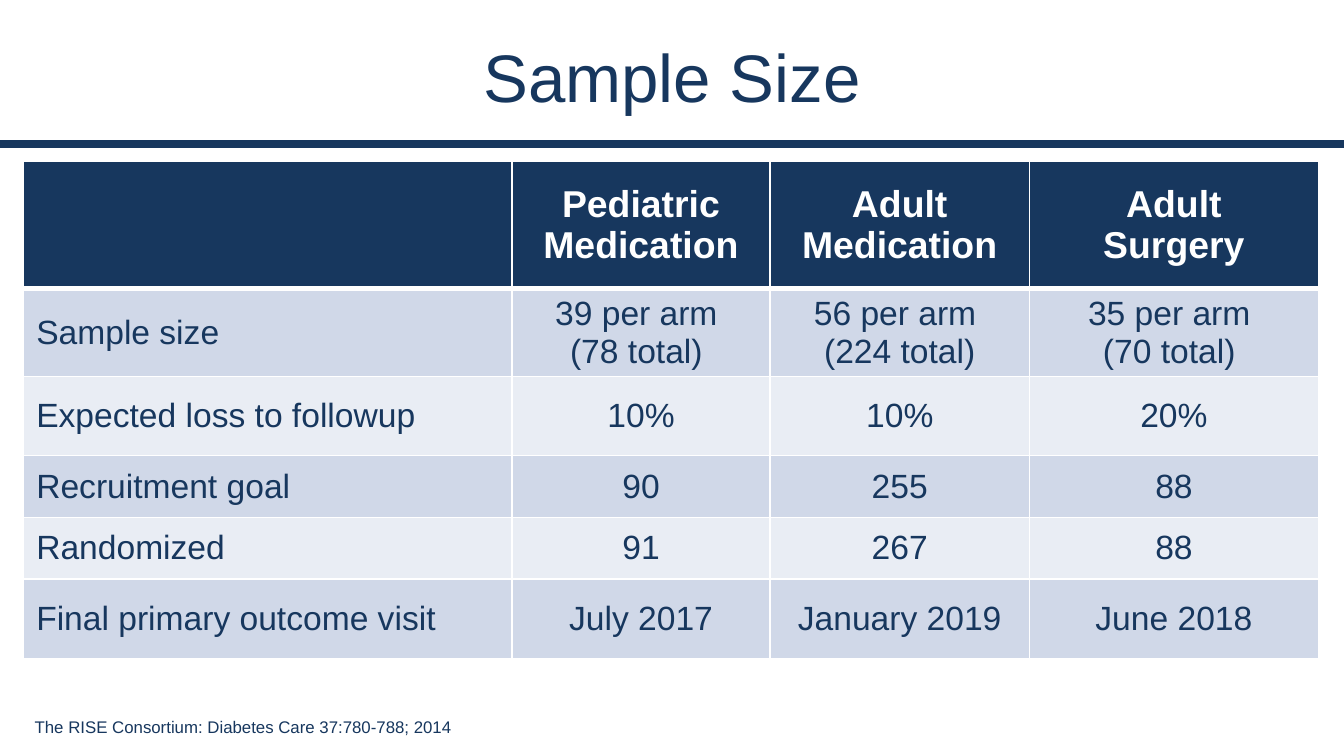
import pptx
import pptx.dml.color
import pptx.enum.shapes
import pptx.enum.text
import pptx.oxml.ns
import pptx.util
import lxml.etree

Inches = pptx.util.Inches
Pt = pptx.util.Pt
RGB = pptx.dml.color.RGBColor
ALIGN = pptx.enum.text.PP_ALIGN
MIDDLE = pptx.enum.text.MSO_ANCHOR.MIDDLE
qn = pptx.oxml.ns.qn

NAVY = RGB(0x17, 0x37, 0x5E)
WHITE = RGB(0xFF, 0xFF, 0xFF)
BANDS = [RGB(0xD0, 0xD8, 0xE8), RGB(0xE9, 0xED, 0xF4)]

COLS = [3.64, 1.92, 1.93, 2.15]
ROWS = [0.95, 0.65, 0.59, 0.46, 0.46, 0.59]
DATA = [
    ["", "Pediatric Medication", "Adult Medication", "Adult\nSurgery"],
    ["Sample size", "39 per arm \n(78 total) ", "56 per arm \n(224 total)",
     "35 per arm \n(70 total) "],
    ["Expected loss to followup", "10%", "10%", "20%"],
    ["Recruitment goal", "90", "255", "88"],
    ["Randomized", "91", "267", "88"],
    ["Final primary outcome visit", "July 2017", "January 2019", "June 2018"],
]


def write(frame, text, size, color, align, bold=False):
    for i, line in enumerate(text.split("\n")):
        para = frame.paragraphs[0] if i == 0 else frame.add_paragraph()
        para.alignment = align
        run = para.add_run()
        run.text = line
        run.font.size = Pt(size)
        run.font.name = "Arial"
        run.font.bold = bold
        run.font.color.rgb = color


def edge(cell, base):
    props = cell._tc.get_or_add_tcPr()
    widths = {"a:lnL": 1, "a:lnR": 1, "a:lnT": 1, "a:lnB": base}
    for i, (tag, width) in enumerate(widths.items()):
        line = lxml.etree.Element(qn(tag), w=str(Pt(width)))
        fill = lxml.etree.SubElement(line, qn("a:solidFill"))
        lxml.etree.SubElement(fill, qn("a:srgbClr"), val=str(WHITE))
        props.insert(i, line)


def add_title(slide, left, top, width, height):
    title = slide.shapes.title
    title.left, title.top = Inches(left), Inches(top)
    title.width, title.height = Inches(width), Inches(height)
    title.text_frame.vertical_anchor = MIDDLE
    write(title.text_frame, "Sample Size", 36, NAVY, ALIGN.CENTER)


def add_rule(slide, left, top, width):
    rule = slide.shapes.add_connector(
        pptx.enum.shapes.MSO_CONNECTOR.STRAIGHT,
        Inches(left), Inches(top), Inches(left + width), Inches(top))
    rule.line.color.rgb = NAVY
    rule.line.width = Pt(4.5)
    lxml.etree.SubElement(rule._element.spPr, qn("a:effectLst"))


def add_grid(slide, left, top):
    grid = slide.shapes.add_table(
        len(ROWS), len(COLS), Inches(left), Inches(top),
        Inches(sum(COLS)), Inches(sum(ROWS))).table
    for col, width in zip(grid.columns, COLS):
        col.width = Inches(width)
    for row, height in zip(grid.rows, ROWS):
        row.height = Inches(height)
    for r, texts in enumerate(DATA):
        head = r == 0
        for c, text in enumerate(texts):
            cell = grid.cell(r, c)
            cell.vertical_anchor = MIDDLE
            cell.margin_left = cell.margin_right = Inches(0.1)
            cell.margin_top = cell.margin_bottom = Inches(0.04)
            cell.fill.solid()
            cell.fill.fore_color.rgb = NAVY if head else BANDS[(r - 1) % 2]
            edge(cell, 3 if head else 1)
            if text:
                write(cell.text_frame, text, 20 if head else 18,
                      WHITE if head else NAVY,
                      ALIGN.CENTER if c else ALIGN.LEFT, head)


def add_source(slide, left, top, width, height):
    box = slide.shapes.add_textbox(
        Inches(left), Inches(top), Inches(width), Inches(height))
    box.text_frame.word_wrap = False
    box.text_frame.auto_size = pptx.enum.text.MSO_AUTO_SIZE.SHAPE_TO_FIT_TEXT
    write(box.text_frame,
          "The RISE Consortium: Diabetes Care 37:780-788; 2014",
          9, NAVY, ALIGN.LEFT)


def main():
    deck = pptx.Presentation()
    deck.slide_width = Inches(10)
    deck.slide_height = deck.slide_width * 9 // 16
    slide = deck.slides.add_slide(deck.slide_layouts.get_by_name("Title Only"))
    add_rule(slide, 0, 1.07, 10.01)
    add_grid(slide, 0.17, 1.2)
    add_title(slide, 0.5, 0.19, 9, 0.74)
    add_source(slide, 0.16, 5.28, 3.36, 0.25)
    deck.save("out.pptx")


if __name__ == "__main__":
    main()
